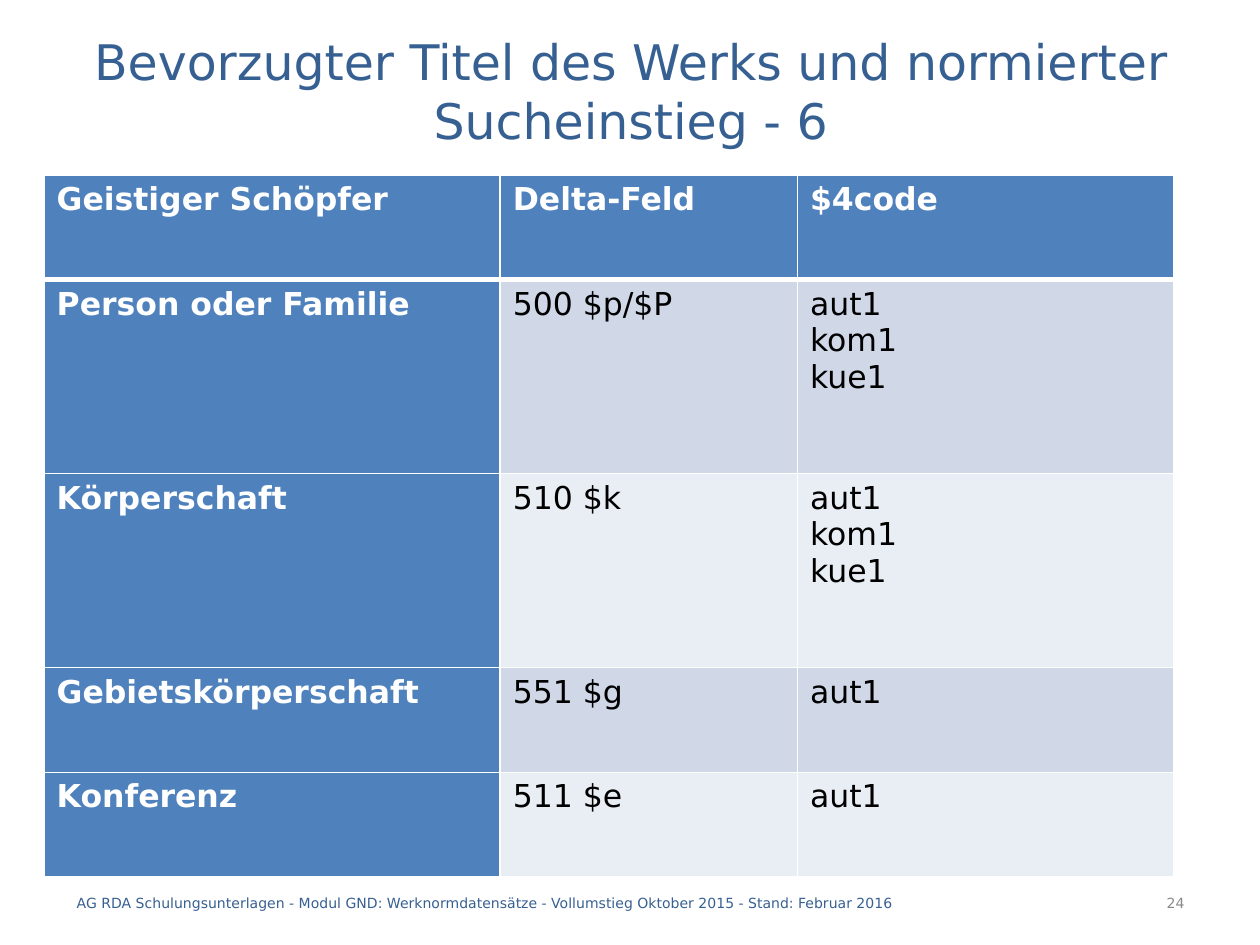
from lxml.etree import SubElement
from pptx import Presentation
from pptx.dml.color import RGBColor
from pptx.enum.text import MSO_ANCHOR, PP_ALIGN
from pptx.oxml.ns import qn
from pptx.util import Inches, Pt

TITLE = "Bevorzugter Titel des Werks und normierter Sucheinstieg - 6"
FOOTER = ("AG RDA Schulungsunterlagen - Modul GND: Werknormdatensätze - "
          "Vollumstieg Oktober 2015 - Stand: Februar 2016")
PAGE_NUMBER = "24"
HEADER = ("Geistiger Schöpfer", "Delta-Feld", "$4code")
CREATORS = [
    ("Person oder Familie", "500 $p/$P", ("aut1", "kom1", "kue1")),
    ("Körperschaft", "510 $k", ("aut1", "kom1", "kue1")),
    ("Gebietskörperschaft", "551 $g", ("aut1",)),
    ("Konferenz", "511 $e", ("aut1",)),
]

THEME = {
    "font": "DejaVu Sans",
    "title_size": 28, "table_size": 18, "footer_size": 8,
    "title": "376092", "page_number": "898989",
    "heading_fill": "4F81BD", "heading_text": "FFFFFF",
    "bands": ("D0D8E8", "E9EDF4"), "body_text": "000000",
    "grid": "FFFFFF", "grid_width": 1, "header_rule_width": 3,
}
COLUMN_WIDTHS = (3.62, 2.36, 2.99)
SHORT_ROW, TALL_ROW = 0.83, 1.54


def style_text(frame, size, color, bold=False, align=PP_ALIGN.LEFT):
    for paragraph in frame.paragraphs:
        paragraph.alignment = align
        font = paragraph.font
        font.name, font.size, font.bold = THEME["font"], Pt(size), bold
        font.color.rgb = RGBColor.from_string(color)


def place_text(shape, box, text, size, color, align):
    shape.left, shape.top, shape.width, shape.height = map(Inches, box)
    frame = shape.text_frame
    frame.text = text
    frame.word_wrap = True
    frame.vertical_anchor = MSO_ANCHOR.MIDDLE
    style_text(frame, size, color, align=align)


def add_borders(cell, top, bottom):
    """Draw grid lines; they must precede the fill in the cell properties."""
    properties = cell._tc.get_or_add_tcPr()
    thin = THEME["grid_width"]
    for side, width in (("L", thin), ("R", thin), ("T", top), ("B", bottom)):
        line = SubElement(properties, qn(f"a:ln{side}"), w=str(Pt(width)))
        fill = SubElement(line, qn("a:solidFill"))
        SubElement(fill, qn("a:srgbClr"), val=THEME["grid"])


def format_cell(cell, text, row, column):
    is_heading = row == 0 or column == 0
    thin, thick = THEME["grid_width"], THEME["header_rule_width"]
    add_borders(cell, thick if row == 1 else thin, thick if row == 0 else thin)
    fill = THEME["heading_fill"] if is_heading else THEME["bands"][(row - 1) % 2]
    cell.fill.solid()
    cell.fill.fore_color.rgb = RGBColor.from_string(fill)
    cell.text_frame.text = text
    color = THEME["heading_text" if is_heading else "body_text"]
    style_text(cell.text_frame, THEME["table_size"], color, is_heading)


def add_creator_table(slide):
    rows = [HEADER] + [(creator, field, "\v".join(codes))
                       for creator, field, codes in CREATORS]
    heights = [SHORT_ROW] + [TALL_ROW if len(codes) > 1 else SHORT_ROW
                             for _, _, codes in CREATORS]
    table = slide.shapes.add_table(
        len(rows), len(HEADER), Inches(0.35), Inches(1.39),
        Inches(sum(COLUMN_WIDTHS)), Inches(sum(heights))).table
    table.first_row = table.horz_banding = False
    for column, width in zip(table.columns, COLUMN_WIDTHS):
        column.width = Inches(width)
    for r, (texts, height) in enumerate(zip(rows, heights)):
        table.rows[r].height = Inches(height)
        for c, text in enumerate(texts):
            format_cell(table.cell(r, c), text, r, c)


def main():
    presentation = Presentation()
    presentation.slide_width, presentation.slide_height = Inches(10), Inches(7.5)
    slide = presentation.slides.add_slide(presentation.slide_layouts[5])

    place_text(slide.shapes.title, (0.28, 0.2, 9.45, 1.03), TITLE,
               THEME["title_size"], THEME["title"], PP_ALIGN.CENTER)
    for box, text, color, align in (
        ((0.51, 6.97, 7.09, 0.4), FOOTER, THEME["title"], PP_ALIGN.LEFT),
        ((7.91, 6.97, 1.59, 0.4), PAGE_NUMBER, THEME["page_number"], PP_ALIGN.RIGHT),
    ):
        place_text(slide.shapes.add_textbox(0, 0, 0, 0), box, text,
                   THEME["footer_size"], color, align)
    add_creator_table(slide)
    presentation.save("out.pptx")


if __name__ == "__main__":
    main()
